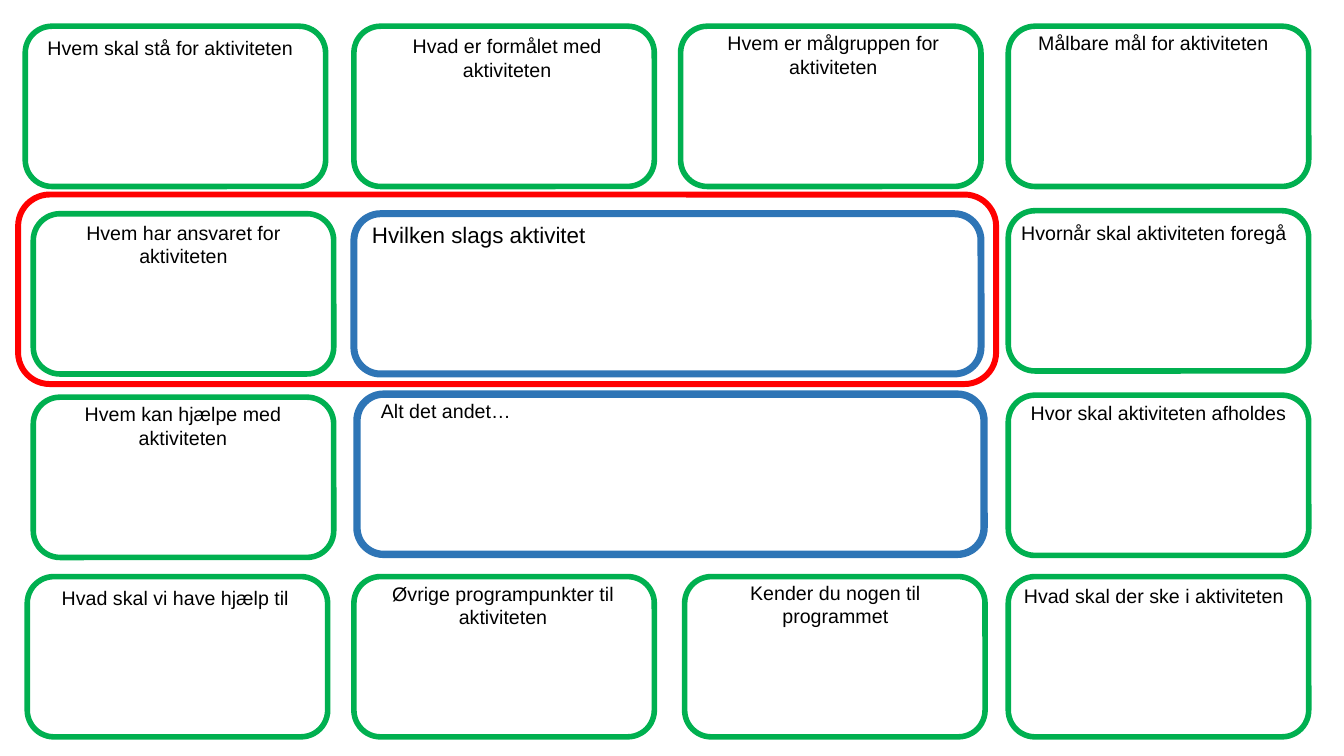
from pptx import Presentation
from pptx.dml.color import RGBColor
from pptx.enum.shapes import MSO_SHAPE
from pptx.enum.text import MSO_AUTO_SIZE, PP_ALIGN
from pptx.util import Emu, Pt

PX = 9144  # 100 px to the inch
GREEN, BLUE, RED = "00B050", "2E75B6", "FF0000"
CARD_W, CARD_H, WIDE_W = 298, 159, 622


def color(hex_text):
    return RGBColor.from_string(hex_text)


class Board:
    font = "Arial"
    ink = "000000"

    def __init__(self, slide):
        self.slide = slide

    def frame(self, left, top, width, height, line, weight, fill=None):
        shape = self.slide.shapes.add_shape(
            MSO_SHAPE.ROUNDED_RECTANGLE,
            *(Emu(n * PX) for n in (left, top, width, height)))
        shape.shadow.inherit = False
        if fill:
            shape.fill.solid()
            shape.fill.fore_color.rgb = color(fill)
        else:
            shape.fill.background()
        shape.line.color.rgb = color(line)
        shape.line.width = Pt(weight)

    def label(self, left, top, width, height, text, size=14, align=PP_ALIGN.CENTER):
        box = self.slide.shapes.add_textbox(
            *(Emu(n * PX) for n in (left, top, width, height)))
        box.text_frame.word_wrap = True
        box.text_frame.auto_size = MSO_AUTO_SIZE.SHAPE_TO_FIT_TEXT
        paragraph = box.text_frame.paragraphs[0]
        paragraph.alignment = align
        run = paragraph.add_run()
        run.text = text
        run.font.name = self.font
        run.font.size = Pt(size)
        run.font.color.rgb = color(self.ink)


# Card left and top, then label left, top and width
QUESTIONS = [
    # Top row
    (25, 26, 36, 31, 266, "Hvem skal stå for aktiviteten"),
    (351, 26, 357, 29, 292, "Hvad er formålet med aktiviteten"),
    (675, 26, 679, 26, 295, "Hvem er målgruppen for aktiviteten"),
    (1000, 26, 998, 26, 292, "Målbare mål for aktiviteten"),
    # Left and right sides
    (33, 212, 33, 214, 298, "Hvem har ansvaret for aktiviteten"),
    (1000, 209, 988, 214, 313, "Hvornår skal aktiviteten foregå"),
    (33, 394, 41, 394, 281, "Hvem kan hjælpe med aktiviteten"),
    (1000, 392, 973, 393, 352, "Hvor skal aktiviteten afholdes"),
    # Bottom row
    (27, 572, 41, 576, 266, "Hvad skal vi have hjælp til"),
    (351, 572, 347, 572, 304, "Øvrige programpunkter til aktiviteten"),
    (679, 572, 684, 571, 289, "Kender du nogen til programmet"),
    (1000, 572, 988, 574, 313, "Hvad skal der ske i aktiviteten"),
]


def main():
    deck = Presentation()
    deck.slide_width, deck.slide_height = Emu(1333 * PX), Emu(750 * PX)
    board = Board(deck.slides.add_slide(deck.slide_layouts[6]))

    # Green question cards
    for left, top, *_ in QUESTIONS:
        board.frame(left, top, CARD_W, CARD_H, GREEN, 4)
    for _, _, left, top, width, question in QUESTIONS:
        board.label(left, top, width, 57, question)

    # Blue centre fields
    board.frame(351, 212, WIDE_W, CARD_H, BLUE, 5)
    board.frame(354, 391, WIDE_W, CARD_H, BLUE, 5.25, fill="FFFFFF")
    board.label(359, 214, 581, 37, "Hvilken slags aktivitet", 16, PP_ALIGN.LEFT)
    board.label(368, 391, 574, 34, "Alt det andet…", align=PP_ALIGN.LEFT)

    # Red outline around the activity and who is responsible
    board.frame(18, 193, 970, 188, RED, 4.25)

    deck.save("out.pptx")


if __name__ == "__main__":
    main()
